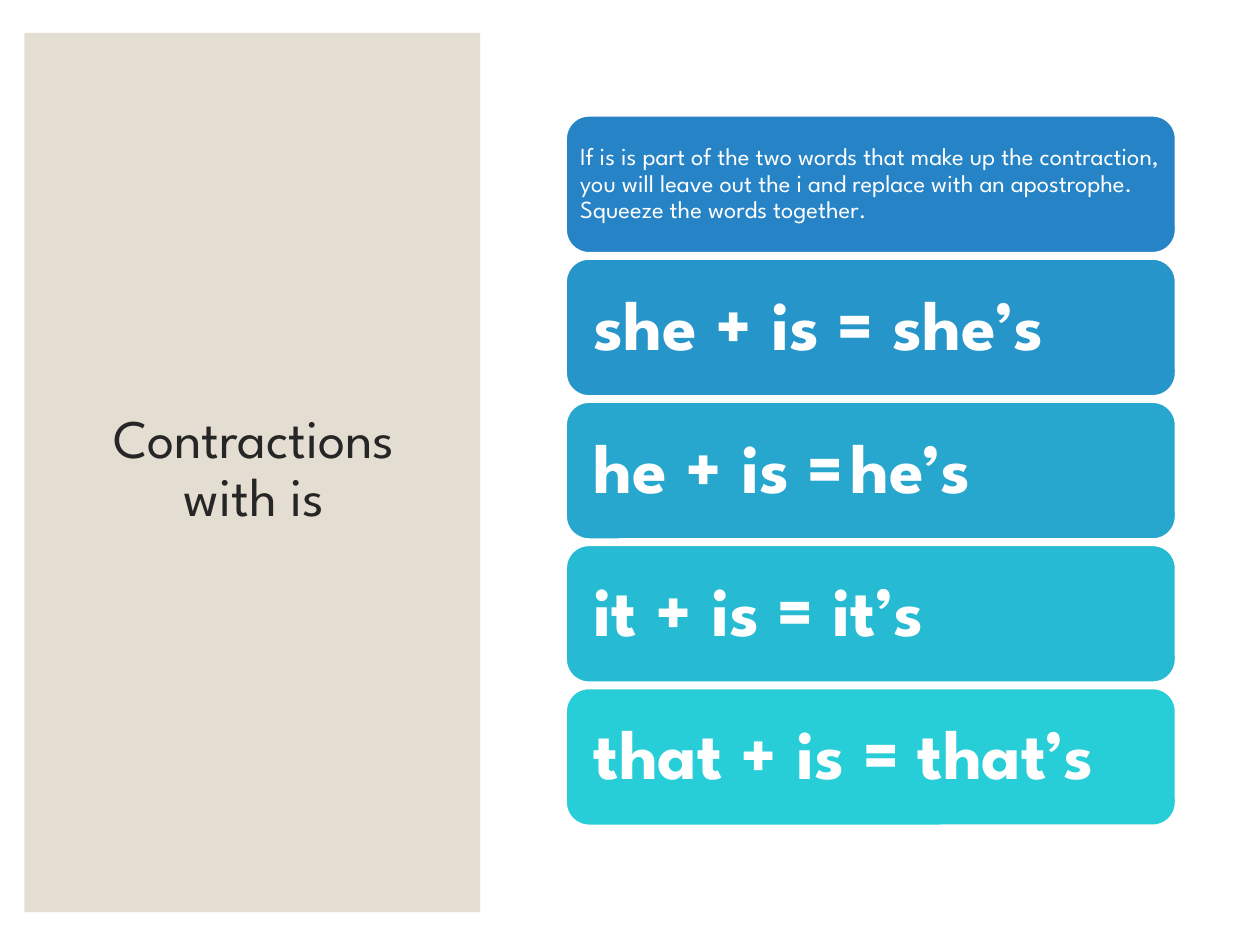
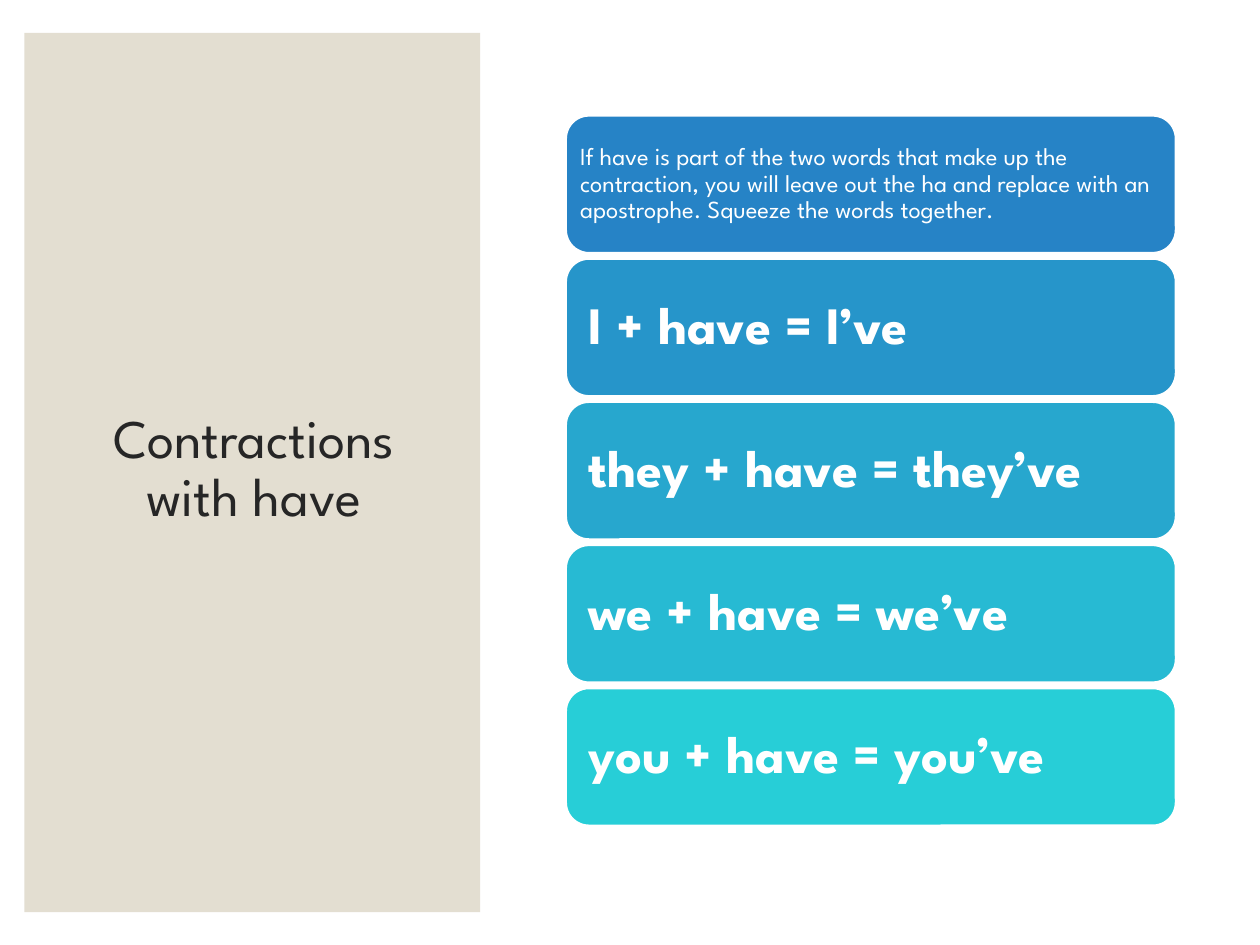
from pptx import Presentation
from pptx.dml.color import RGBColor as Rgb
from pptx.enum.shapes import MSO_SHAPE as Kind
from pptx.enum.text import MSO_ANCHOR as Anchor, PP_ALIGN as Align
from pptx.util import Pt

FONT = "League Spartan"
WHITE = Rgb(0xFF, 0xFF, 0xFF)
SAND = Rgb(0xE3, 0xDE, 0xD1)
INK = Rgb(0x26, 0x26, 0x26)
BLUES = [
    Rgb(0x26, 0x83, 0xC6),
    Rgb(0x26, 0x95, 0xCA),
    Rgb(0x27, 0xA7, 0xCE),
    Rgb(0x27, 0xBA, 0xD3),
    Rgb(0x27, 0xCE, 0xD7),
]

RULE_SIZE, RULE_PAD = 14, 4.2
TITLE_SIZE = 31
LESSONS = [
    {
        "title": "Contractions with is",
        "rule": "If is is part of the two words that make up the contraction, "
                "you will leave out the i and replace with an apostrophe. "
                "Squeeze the words together.",
        "size": 40,
        "pad": 12,
        "sums": [
            ["she + is = she’s"],
            ["he + is =", " ", "he’s"],
            ["it + is = it’s"],
            ["that + is = that’s"],
        ],
    },
    {
        "title": "Contractions with have",
        "rule": "If have is part of the two words that make up the contraction, "
                "you will leave out the ha and replace with an apostrophe. "
                "Squeeze the words together.",
        "size": 30,
        "pad": 9,
        "sums": [
            ["I + have = I’ve"],
            ["they + have = they’ve"],
            ["we + have = we’ve"],
            ["you + have = you’ve"],
        ],
    },
]

PANEL = (13.9, 18.8, 260.5, 502.5)
TITLE = (33.8, 43.9, 222.5, 449.3)
LEFT, TOP, WIDE, HIGH, STEP = 323.5, 66.2, 348.3, 78.3, 81.8


def add_box(slide, kind, place, fill):
    box = slide.shapes.add_shape(kind, *map(Pt, place))
    box.shadow.inherit = False
    box.fill.solid()
    box.fill.fore_color.rgb = fill
    box.line.fill.background()
    return box


def write(box, runs, color, align, pad):
    frame = box.text_frame
    frame.word_wrap = True
    frame.vertical_anchor = Anchor.MIDDLE
    frame.margin_left = frame.margin_right = Pt(pad)
    frame.margin_top = frame.margin_bottom = Pt(pad)
    para = frame.paragraphs[0]
    para.alignment = align
    para.line_spacing = 0.9
    for text, size, bold in runs:
        run = para.add_run()
        run.text = text
        run.font.name = FONT
        run.font.size = Pt(size)
        run.font.bold = bold
        run.font.color.rgb = color


def add_card(slide, row, runs, pad):
    place = (LEFT, TOP + row * STEP, WIDE, HIGH)
    card = add_box(slide, Kind.ROUNDED_RECTANGLE, place, BLUES[row])
    card.line.color.rgb = WHITE
    card.line.width = Pt(1)
    write(card, runs, WHITE, Align.LEFT, pad)


def add_lesson(deck, lesson):
    slide = deck.slides.add_slide(deck.slide_layouts[6])
    add_box(slide, Kind.RECTANGLE, PANEL, SAND)
    title = slide.shapes.add_textbox(*map(Pt, TITLE))
    write(title, [(lesson["title"], TITLE_SIZE, False)], INK, Align.CENTER, 7.2)
    add_card(slide, 0, [(lesson["rule"], RULE_SIZE, False)], RULE_PAD)
    for row, parts in enumerate(lesson["sums"], 1):
        runs = [
            (part, RULE_SIZE, False) if part == " " else (part, lesson["size"], True)
            for part in parts
        ]
        add_card(slide, row, runs, lesson["pad"])


def main():
    deck = Presentation()
    deck.slide_width, deck.slide_height = Pt(720), Pt(540)
    for lesson in LESSONS:
        add_lesson(deck, lesson)
    deck.save("out.pptx")


if __name__ == "__main__":
    main()
